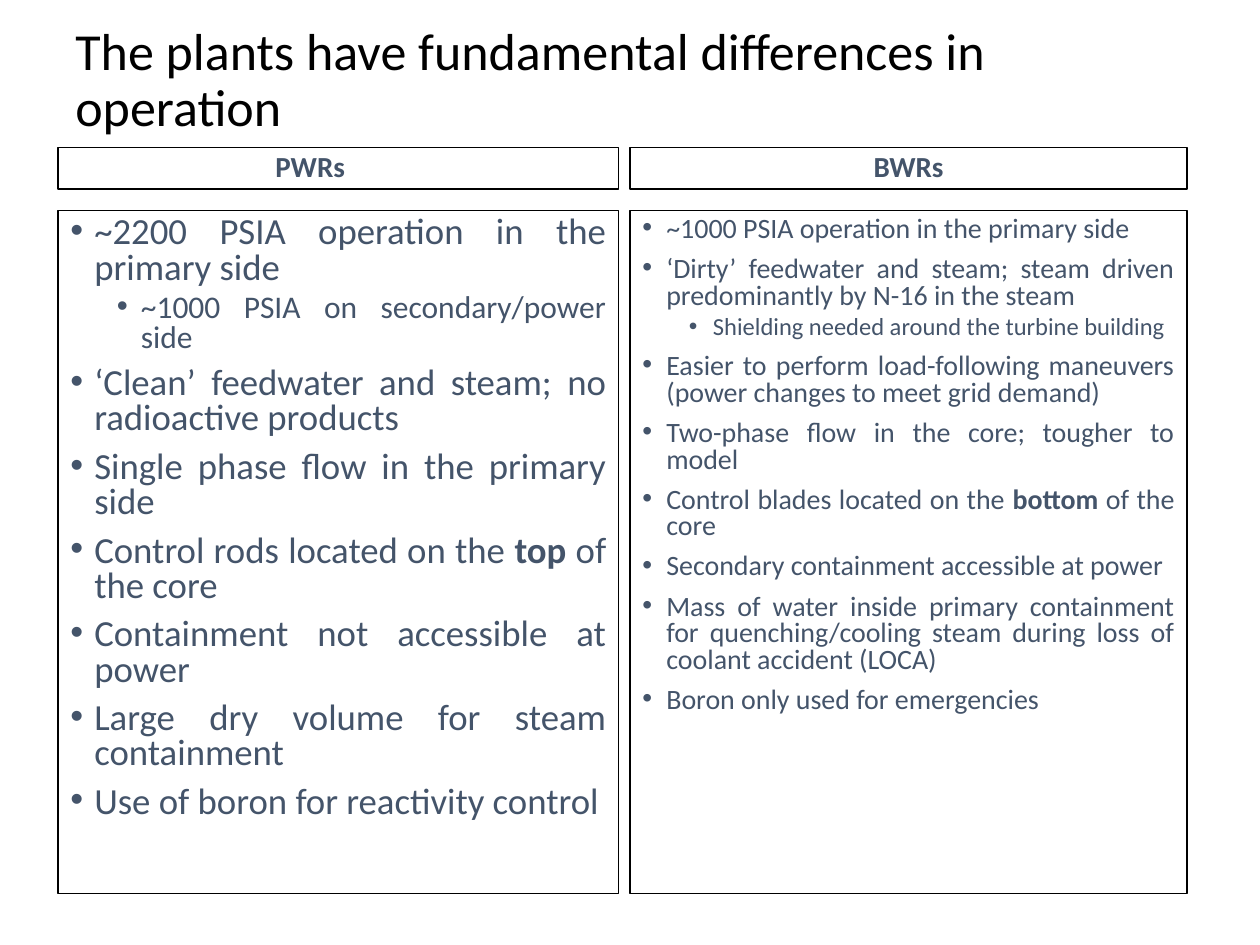
from lxml import etree
from pptx import Presentation
from pptx.dml.color import RGBColor
from pptx.enum import shapes, text
from pptx.oxml.ns import qn
from pptx.util import Inches, Pt

COLORS = {"title": "000000", "border": "000000", "body": "44546A"}
FONT = "Calibri"
HEADING_TOP, HEADING_HEIGHT = 1.17, 0.33
LIST_TOP, LIST_HEIGHT = 1.67, 5.42
INDENTS = (0.19, 0.56)
SPACES_BEFORE = (7.5, 3.8)

# Each point is (level, text); ** encloses bold words.
COLUMNS = [
    {"left": 0.46, "width": 4.45, "heading": "PWRs\t", "sizes": (21, 18), "points": [
        (0, "~2200 PSIA operation in the primary side"),
        (1, "~1000 PSIA on secondary/power side"),
        (0, "‘Clean’ feedwater and steam; no radioactive products"),
        (0, "Single phase flow in the primary side"),
        (0, "Control rods located on the **top** of the core"),
        (0, "Containment not accessible at power"),
        (0, "Large dry volume for steam containment"),
        (0, "Use of boron for reactivity control"),
    ]},
    {"left": 5, "width": 4.42, "heading": "BWRs", "sizes": (16, 14), "points": [
        (0, "~1000 PSIA operation in the primary side"),
        (0, "‘Dirty’ feedwater and steam; steam driven predominantly by N-16 in the steam"),
        (1, "Shielding needed around the turbine building"),
        (0, "Easier to perform load-following maneuvers (power changes to meet grid demand)"),
        (0, "Two-phase flow in the core; tougher to model"),
        (0, "Control blades located on the **bottom** of the core"),
        (0, "Secondary containment accessible at power"),
        (0, "Mass of water inside primary containment for quenching/cooling steam "
            "during loss of coolant accident (LOCA)"),
        (0, "Boron only used for emergencies"),
    ]},
]


def apply_format(target, values):
    for name, value in values.items():
        setattr(target, name, value)


def add_runs(paragraph, content, size, color, bold=False):
    """Write content, switching to bold between pairs of **."""
    for index, part in enumerate(content.split("**")):
        run = paragraph.add_run()
        run.text = part
        apply_format(run.font, {"name": FONT, "size": Pt(size),
                                "bold": bold or index % 2 == 1})
        run.font.color.rgb = RGBColor.from_string(COLORS[color])


def add_bullet(paragraph, level):
    properties = paragraph._p.get_or_add_pPr()
    properties.set("marL", str(Inches(INDENTS[level])))
    properties.set("indent", str(-Inches(INDENTS[0])))
    etree.SubElement(properties, qn("a:buFont"), typeface="Arial")
    etree.SubElement(properties, qn("a:buChar"), char="•")


def add_title(slide, content):
    title = slide.shapes.add_textbox(Inches(0.5), Inches(0.3), Inches(9), Inches(0.7))
    frame = title.text_frame
    apply_format(frame, {"word_wrap": True, "vertical_anchor": text.MSO_ANCHOR.MIDDLE})
    frame.paragraphs[0].line_spacing = 0.9
    add_runs(frame.paragraphs[0], content, 29.7, "title")


def add_panel(slide, left, top, width, height, anchor):
    """Add an outlined box and return its text frame."""
    panel = slide.shapes.add_shape(shapes.MSO_SHAPE.RECTANGLE, Inches(left),
                                   Inches(top), Inches(width), Inches(height))
    panel.shadow.inherit = False
    panel.fill.background()
    panel.line.color.rgb = RGBColor.from_string(COLORS["border"])
    panel.line.width = Pt(0.75)
    apply_format(panel.text_frame, {"word_wrap": True, "vertical_anchor": anchor})
    return panel.text_frame


def add_heading(slide, column):
    frame = add_panel(slide, column["left"], HEADING_TOP, column["width"],
                      HEADING_HEIGHT, text.MSO_ANCHOR.BOTTOM)
    paragraph = frame.paragraphs[0]
    apply_format(paragraph, {"alignment": text.PP_ALIGN.CENTER, "line_spacing": 0.8})
    add_runs(paragraph, column["heading"], 16.6, "body", bold=True)


def add_points(slide, column):
    frame = add_panel(slide, column["left"], LIST_TOP, column["width"],
                      LIST_HEIGHT, text.MSO_ANCHOR.TOP)
    for index, (level, content) in enumerate(column["points"]):
        paragraph = frame.add_paragraph() if index else frame.paragraphs[0]
        add_bullet(paragraph, level)
        apply_format(paragraph, {
            "level": level,
            "alignment": text.PP_ALIGN.JUSTIFY,
            "line_spacing": 0.8,
            "space_before": Pt(SPACES_BEFORE[level] if index else 0),
        })
        add_runs(paragraph, content, column["sizes"][level], "body")


def main():
    presentation = Presentation()
    apply_format(presentation, {"slide_width": Inches(10), "slide_height": Inches(7.5)})
    slide = presentation.slides.add_slide(presentation.slide_layouts[6])
    add_title(slide, "The plants have fundamental differences in operation")
    for column in COLUMNS:
        add_heading(slide, column)
        add_points(slide, column)
    presentation.save("out.pptx")


if __name__ == "__main__":
    main()
